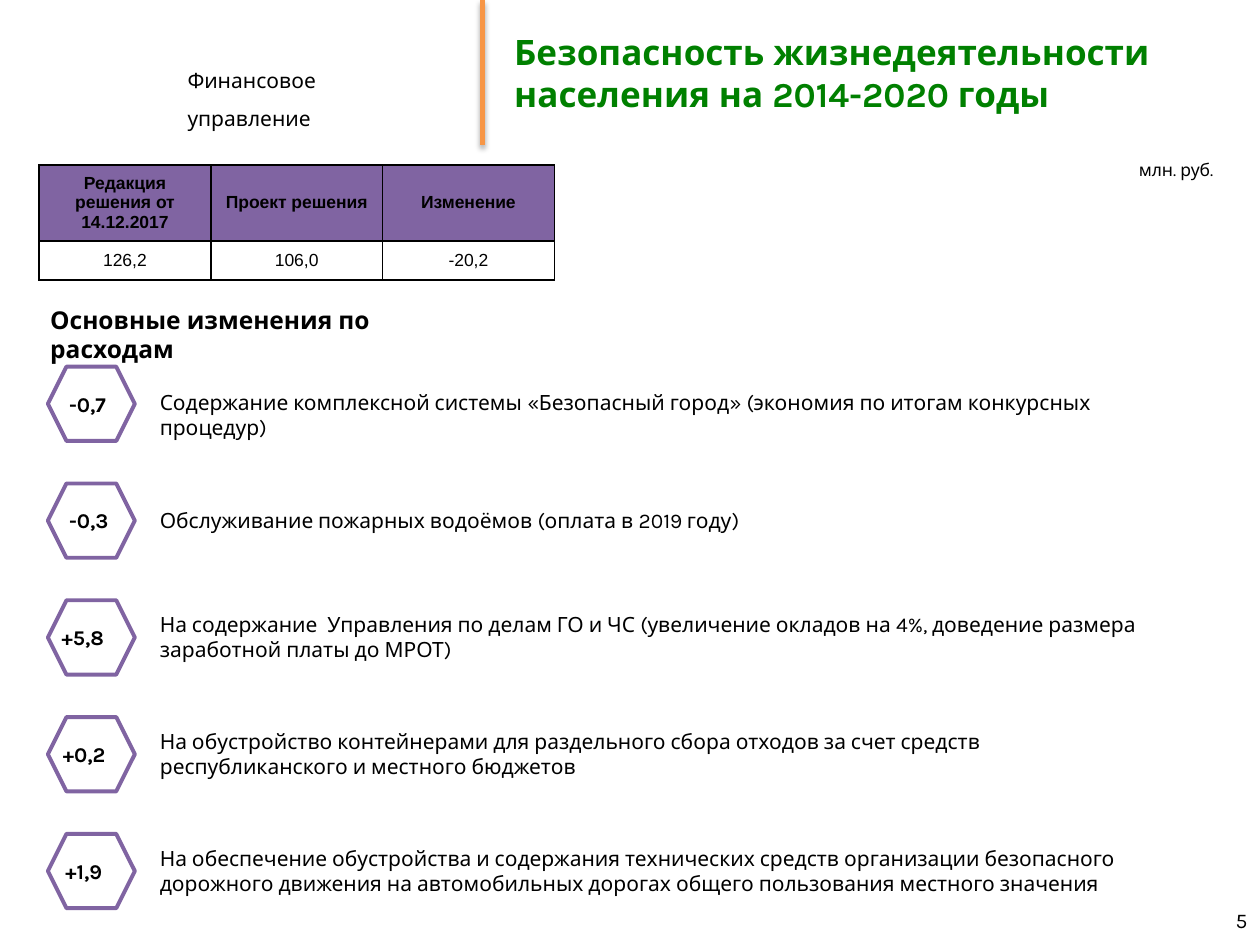
from dataclasses import dataclass

from lxml import etree
from pptx import Presentation
from pptx.dml.color import RGBColor
from pptx.enum.shapes import MSO_CONNECTOR, MSO_SHAPE
from pptx.enum.text import MSO_ANCHOR, PP_ALIGN
from pptx.oxml import parse_xml
from pptx.oxml.ns import nsdecls, qn
from pptx.util import Inches, Pt

BLACK = RGBColor(0x00, 0x00, 0x00)
GREEN = RGBColor(0x00, 0x80, 0x00)
ORANGE = RGBColor(0xF7, 0x96, 0x46)
PURPLE = RGBColor(0x80, 0x64, 0xA2)

LEFT, CENTER, RIGHT = PP_ALIGN.LEFT, PP_ALIGN.CENTER, PP_ALIGN.RIGHT
TOP, MIDDLE = MSO_ANCHOR.TOP, MSO_ANCHOR.MIDDLE
HEXAGON = MSO_SHAPE.HEXAGON
STRAIGHT = MSO_CONNECTOR.STRAIGHT

# The slide is a grid of 100 columns by 75 rows of square cells
COLUMNS, ROWS = 100, 75
CELL = Inches(10) // COLUMNS

ITEMS_TOP = 29.1
ITEM_PITCH = 9.27


@dataclass(frozen=True)
class Area:
    column: float
    row: float
    width: float
    height: float

    def emu(self) -> list[int]:
        return [round(n * CELL) for n in (self.column, self.row, self.width, self.height)]


@dataclass(frozen=True)
class TextStyle:
    size: float = 12
    bold: bool = False
    color: RGBColor = BLACK
    font: str = "Karla"
    align: PP_ALIGN = LEFT
    spacing: float = 1.0


@dataclass(frozen=True)
class Change:
    amount: str
    amount_column: float
    purpose: str
    purpose_shift: float  # rows below the top of the hexagon
    purpose_height: float


BODY = TextStyle()
AMOUNT = TextStyle(bold=True)
HEADER_CELL = TextStyle(10, True, font="Arial", align=CENTER)
VALUE_CELL = TextStyle(10, font="Arial", align=CENTER)

BUDGET = (
    ("Редакция решения от 14.12.2017", "Проект решения", "Изменение"),
    ("126,2", "106,0", "-20,2"),
)

CHANGES = (
    Change("-0,7", 4.5, "Содержание комплексной системы «Безопасный город» "
           "(экономия по итогам конкурсных процедур)", 1.3, 5),
    Change("-0,3", 4.5, "Обслуживание пожарных водоёмов (оплата в 2019 году)", 1.4, 3),
    Change("+5,8", 3.9, "На содержание  Управления по делам ГО и ЧС (увеличение окладов "
           "на 4%, доведение размера заработной платы до МРОТ)", 0.4, 5),
    Change("+0,2", 4.0, "На обустройство контейнерами для раздельного сбора отходов "
           "за счет средств республиканского и местного бюджетов", 0.4, 5),
    Change("+1,9", 4.2, "На обеспечение обустройства и содержания технических средств "
           "организации безопасного дорожного движения на автомобильных дорогах "
           "общего пользования местного значения", 0.4, 5),
)


def write(frame, text: str, style: TextStyle, anchor=TOP) -> None:
    frame.text = text
    frame.word_wrap = True
    frame.vertical_anchor = anchor
    paragraph = frame.paragraphs[0]
    paragraph.alignment = style.align
    paragraph.line_spacing = style.spacing
    font = paragraph.runs[0].font
    font.name, font.size, font.bold = style.font, Pt(style.size), style.bold
    font.color.rgb = style.color


def add_label(slide, area: Area, text: str, style: TextStyle, anchor=TOP) -> None:
    write(slide.shapes.add_textbox(*area.emu()).text_frame, text, style, anchor)


def add_divider(slide, column: float, height: float) -> None:
    x = round(column * CELL)
    divider = slide.shapes.add_connector(STRAIGHT, x, 0, x, round(height * CELL))
    divider.line.color.rgb = ORANGE
    divider.line.width = Pt(3)
    divider._element.spPr.append(parse_xml(
        f'<a:effectLst {nsdecls("a")}>'
        f'<a:outerShdw blurRad="{Pt(3.1)}" dist="{Pt(1.8)}" dir="5400000" rotWithShape="0">'
        '<a:srgbClr val="000000"><a:alpha val="35000"/></a:srgbClr>'
        '</a:outerShdw></a:effectLst>'))


def add_borders(cell) -> None:
    properties = cell._tc.get_or_add_tcPr()
    for position, side in enumerate(("lnL", "lnR", "lnT", "lnB")):
        border = etree.Element(qn(f"a:{side}"), w=str(Pt(1)))
        fill = etree.SubElement(border, qn("a:solidFill"))
        etree.SubElement(fill, qn("a:srgbClr"), val=str(BLACK))
        properties.insert(position, border)


def add_budget_table(slide, area: Area, row_heights: tuple[float, ...]) -> None:
    table = slide.shapes.add_table(len(BUDGET), len(BUDGET[0]), *area.emu()).table
    table.first_row = table.horz_banding = False
    for r, (values, height) in enumerate(zip(BUDGET, row_heights)):
        table.rows[r].height = round(height * CELL)
        for c, value in enumerate(values):
            cell = table.cell(r, c)
            write(cell.text_frame, value, VALUE_CELL if r else HEADER_CELL)
            cell.vertical_anchor = MIDDLE
            if r:
                cell.fill.background()
            else:
                cell.fill.solid()
                cell.fill.fore_color.rgb = PURPLE
            add_borders(cell)


def add_change(slide, change: Change, row: float) -> None:
    hexagon = slide.shapes.add_shape(HEXAGON, *Area(3.8, row, 6.9, 5.9).emu())
    hexagon.shadow.inherit = False
    hexagon.fill.background()
    hexagon.line.color.rgb = PURPLE
    hexagon.line.width = Pt(2.25)
    add_label(slide, Area(change.amount_column, row + 1.45, 6.1, 3), change.amount, AMOUNT)
    add_label(slide, Area(11.7, row + change.purpose_shift, 81.7, change.purpose_height),
              change.purpose, BODY)


def main() -> None:
    deck = Presentation()
    deck.slide_width, deck.slide_height = COLUMNS * CELL, ROWS * CELL
    slide = deck.slides.add_slide(deck.slide_layouts[5])

    # Heading
    add_label(slide, Area(13.9, 3.9, 21, 3.6), "Финансовое управление",
              TextStyle(spacing=1.5))
    add_divider(slide, 38.3, 11.5)
    title = slide.shapes.title
    title.left, title.top, title.width, title.height = Area(39.8, 0, 60.2, 11.5).emu()
    write(title.text_frame, "Безопасность жизнедеятельности населения на 2014-2020 годы",
          TextStyle(20, True, GREEN), MIDDLE)

    # Budget figures
    add_label(slide, Area(89.4, 12.1, 8, 2.7), "млн. руб.", TextStyle(10))
    add_budget_table(slide, Area(3.1, 13.1, 40.9, 9.1), (6, 3.1))

    # Changes in spending
    add_label(slide, Area(3, 23.7, 37.5, 3.4), "Основные изменения по расходам",
              TextStyle(14, True))
    for index, change in enumerate(CHANGES):
        add_change(slide, change, ITEMS_TOP + index * ITEM_PITCH)

    # Page number
    add_label(slide, Area(76.7, 71, 23.3, 4), "5", TextStyle(align=RIGHT), MIDDLE)

    deck.save("out.pptx")


if __name__ == "__main__":
    main()
